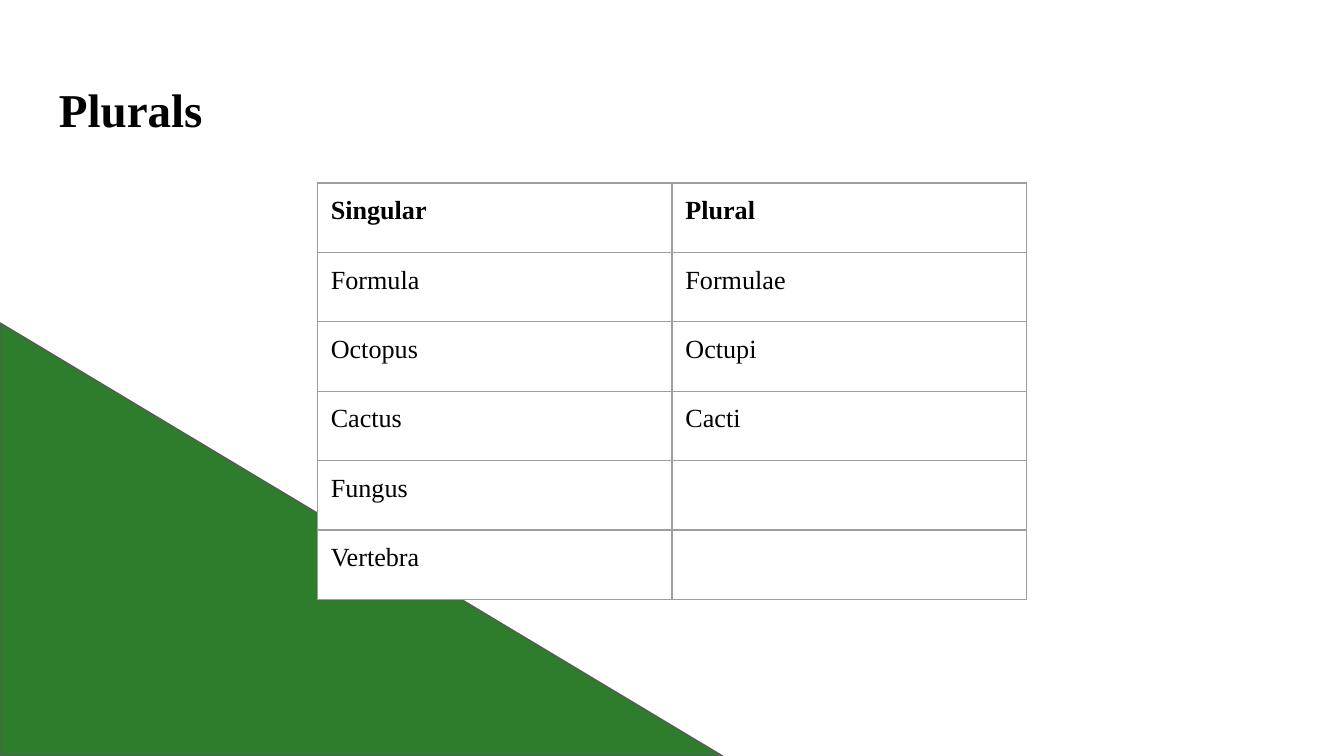
import dataclasses

import pptx
import pptx.dml.color
import pptx.enum.shapes
import pptx.enum.text
import pptx.oxml
import pptx.oxml.ns
import pptx.util

Pt = pptx.util.Pt
Color = pptx.dml.color.RGBColor.from_string


@dataclasses.dataclass(frozen=True)
class Theme:
    font: str = "Times New Roman"
    text: str = "000000"
    paper: str = "FFFFFF"
    accent: str = "2D7D2D"
    outline: str = "595959"
    grid: str = "9E9E9E"
    line_width: float = 0.75
    title_size: float = 25.2
    table_size: float = 14
    inset: float = 7.2


theme = Theme()


def write(frame, text, *, size, bold=False):
    """Put one formatted line of text into a text frame."""
    para = frame.paragraphs[0]
    span = para.add_run()
    span.text = text
    span.font.name = theme.font
    span.font.size = Pt(size)
    span.font.bold = bold
    span.font.color.rgb = Color(theme.text)


def add_border(cell):
    """Draw the grid line on all four sides of a table cell."""
    properties = cell._tc.get_or_add_tcPr()
    for position, side in enumerate(("lnL", "lnR", "lnT", "lnB")):
        border = pptx.oxml.parse_xml(
            f'<a:{side} {pptx.oxml.ns.nsdecls("a")} w="{Pt(theme.line_width)}">'
            f'<a:solidFill><a:srgbClr val="{theme.grid}"/></a:solidFill></a:{side}>'
        )
        properties.insert(position, border)


deck = pptx.Presentation()
deck.slide_width = Pt(720)
deck.slide_height = Pt(405)
page = deck.slides.add_slide(deck.slide_layouts[6])

# Corner triangle and the white panel behind the table
table_left, table_top = 170, 98
column_width, row_height = 190, 37.2
rows = [
    ("Singular", "Plural"),
    ("Formula", "Formulae"),
    ("Octopus", "Octupi"),
    ("Cactus", "Cacti"),
    ("Fungus", ""),
    ("Vertebra", ""),
]
table_area = (table_left, table_top, 2 * column_width, len(rows) * row_height)

kinds = pptx.enum.shapes.MSO_SHAPE
for kind, area, fill in (
    (kinds.RIGHT_TRIANGLE, (0, 173, 387, 232), theme.accent),
    (kinds.RECTANGLE, table_area, theme.paper),
):
    shape = page.shapes.add_shape(kind, *map(Pt, area))
    shape.shadow.inherit = False
    shape.fill.solid()
    shape.fill.fore_color.rgb = Color(fill)
    shape.line.color.rgb = Color(theme.outline)
    shape.line.width = Pt(theme.line_width)

# Title
box = page.shapes.add_textbox(Pt(24.5), Pt(35.5), Pt(671), Pt(45))
frame = box.text_frame
frame.word_wrap = True
frame.vertical_anchor = pptx.enum.text.MSO_ANCHOR.BOTTOM
frame.margin_left = frame.margin_right = Pt(theme.inset)
frame.margin_top = frame.margin_bottom = Pt(theme.inset)
write(frame, "Plurals", size=theme.title_size, bold=True)

# Table of singular and plural forms
table = page.shapes.add_table(len(rows), 2, *map(Pt, table_area)).table
table.first_row = False
table.horz_banding = False
for column in table.columns:
    column.width = Pt(column_width)
for row_index, words in enumerate(rows):
    table.rows[row_index].height = Pt(row_height)
    for column_index, word in enumerate(words):
        cell = table.cell(row_index, column_index)
        cell.fill.background()
        cell.margin_left = cell.margin_right = Pt(theme.inset)
        cell.margin_top = cell.margin_bottom = Pt(theme.inset)
        add_border(cell)
        if word:
            write(cell.text_frame, word, size=theme.table_size, bold=row_index == 0)

deck.save("out.pptx")
